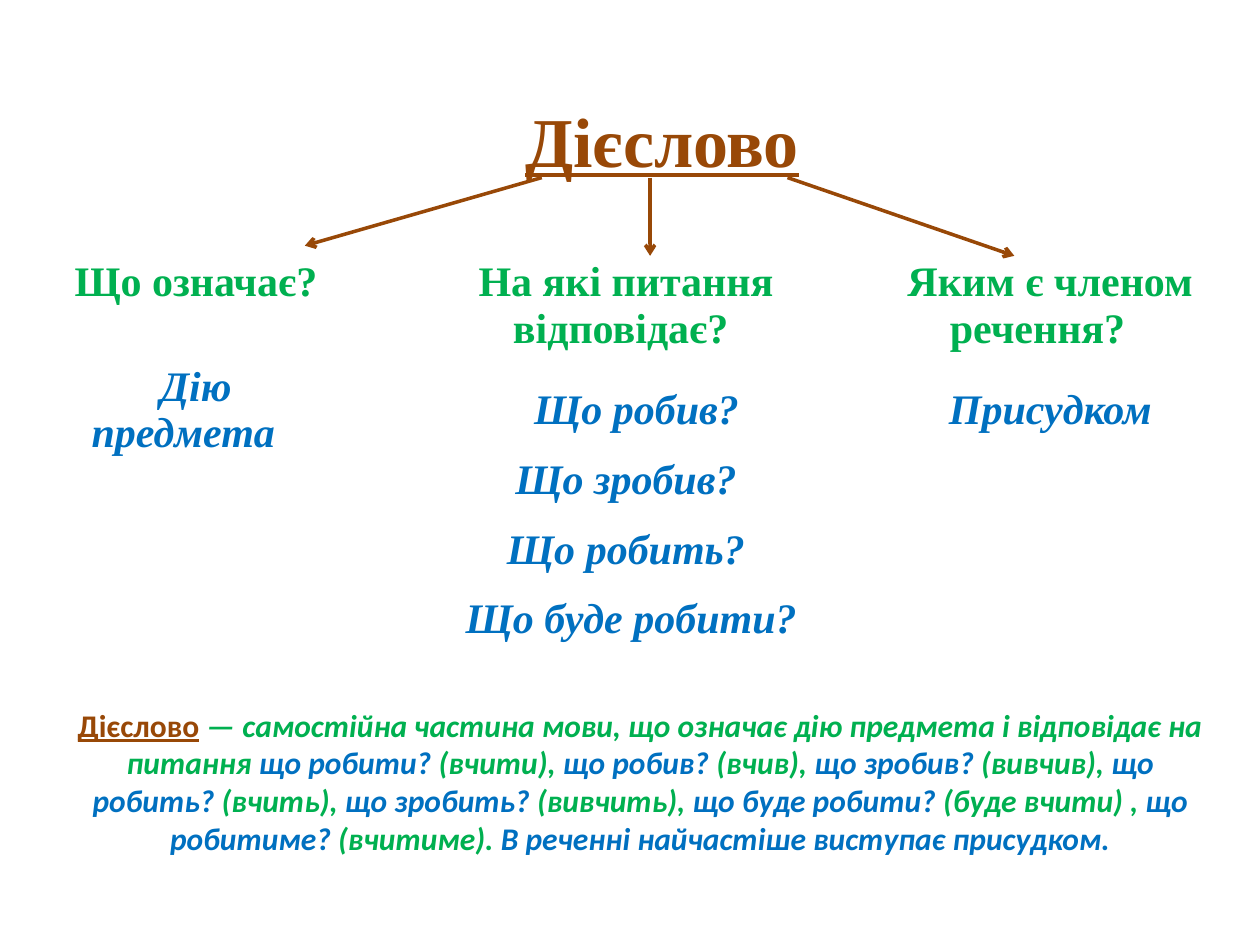
"""Build a slide about the verb: a three-column scheme with a definition below."""
from dataclasses import dataclass

from pptx import Presentation
from pptx.dml.color import RGBColor
from pptx.enum.shapes import MSO_CONNECTOR as Connector
from pptx.enum.text import MSO_ANCHOR as Anchor, MSO_AUTO_SIZE as AutoSize, PP_ALIGN as Align
from pptx.oxml.ns import qn
from pptx.oxml.xmlchemy import OxmlElement
from pptx.util import Pt

BROWN, GREEN, BLUE, BLACK = "984807", "00B050", "0070C0", "000000"
SERIF, SANS = "Times New Roman", "Calibri"
FIRST_LINE = 14.4
TITLE_BOTTOM_MARGIN = 40
DEFINITION_MARGIN = 14
COLUMN_WIDTHS = (164.9, 278.6, 254.2)
ROW_HEIGHTS = (114.5, 59.8, 168)


@dataclass(frozen=True)
class Style:
    color: str
    size: float = 24
    font: str = SERIF
    italic: bool = False
    underline: bool = False


@dataclass(frozen=True)
class Line:
    text: str
    margin: float = 0
    spacing: float = 1.0


@dataclass(frozen=True)
class CellText:
    row: int
    column: int
    style: Style
    lines: tuple[Line, ...]


@dataclass(frozen=True)
class Arrow:
    start: tuple[float, float]
    end: tuple[float, float]


TITLE = Style(BROWN, size=40, underline=True)
QUESTION = Style(GREEN)
ANSWER = Style(BLUE, italic=True)
TERM = Style(BROWN, 18, SANS, underline=True)
GAP = Style(BLACK, 18, SANS)
RULE = Style(GREEN, 18, SANS, italic=True)
KEY = Style(BLUE, 18, SANS, italic=True)

CELLS = (
    CellText(0, 0, TITLE, (Line("Дієслово", spacing=1.5),)),
    CellText(1, 0, QUESTION, (Line("Що означає?"),)),
    CellText(1, 1, QUESTION, (Line("На які питання", 48), Line("відповідає?", 42))),
    CellText(1, 2, QUESTION, (Line("Яким є членом речення?"),)),
    CellText(2, 0, ANSWER, (Line("Дію предмета"),)),
    CellText(2, 1, ANSWER, (
        Line("Що робив?", 60, 1.5),
        Line("Що зробив?", 48, 1.5),
        Line("Що робить?", 48, 1.5),
        Line("Що буде робити?", 54, 1.5),
    )),
    CellText(2, 2, ANSWER, (Line("Присудком", spacing=1.5),)),
)

ARROWS = (
    Arrow((309.6, 101.5), (174.2, 140.4)),
    Arrow((371.5, 101.5), (371.5, 146.2)),
    Arrow((450, 101.5), (579.6, 146.2)),
)

EXAMPLES = (
    ("що робити? ", "(вчити), "),
    ("що робив? ", "(вчив), "),
    ("що зробив? ", "(вивчив), "),
    ("що робить? ", "(вчить), "),
    ("що зробить? ", "(вивчить), "),
    ("що буде робити? ", "(буде вчити) , "),
    ("що робитиме? ", "(вчитиме). "),
)


def rgb(value: str) -> RGBColor:
    return RGBColor.from_string(value)


def add_run(paragraph, text: str, style: Style) -> None:
    run = paragraph.add_run()
    run.text = text
    font = run.font
    font.name, font.size, font.bold = style.font, Pt(style.size), True
    font.italic, font.underline = style.italic, style.underline
    font.color.rgb = rgb(style.color)


def fill_cell(cell, content: CellText) -> None:
    frame = cell.text_frame
    for index, line in enumerate(content.lines):
        paragraph = frame.add_paragraph() if index else frame.paragraphs[0]
        properties = paragraph._p.get_or_add_pPr()
        properties.set("marL", str(Pt(line.margin)))
        properties.set("indent", str(Pt(FIRST_LINE)))
        paragraph.alignment = Align.CENTER
        paragraph.line_spacing = line.spacing
        add_run(paragraph, line.text, content.style)


def add_scheme(slide) -> None:
    shape = slide.shapes.add_table(
        len(ROW_HEIGHTS), len(COLUMN_WIDTHS), Pt(22.3), Pt(33.8),
        Pt(sum(COLUMN_WIDTHS)), Pt(sum(ROW_HEIGHTS)))
    table = shape.table
    table.first_row = table.horz_banding = False
    for column, width in zip(table.columns, COLUMN_WIDTHS):
        column.width = Pt(width)
    for row, height in zip(table.rows, ROW_HEIGHTS):
        row.height = Pt(height)
    for cell in table.iter_cells():
        cell.fill.background()
        cell.margin_left = cell.margin_right = Pt(5.4)
        cell.margin_top = cell.margin_bottom = Pt(0)
    title_cell = table.cell(0, 0)
    title_cell.merge(table.cell(0, 2))
    title_cell.vertical_anchor = Anchor.MIDDLE
    title_cell.margin_bottom = Pt(TITLE_BOTTOM_MARGIN)
    for content in CELLS:
        fill_cell(table.cell(content.row, content.column), content)


def add_arrow(slide, arrow: Arrow) -> None:
    connector = slide.shapes.add_connector(
        Connector.STRAIGHT, *(Pt(value) for value in arrow.start + arrow.end))
    connector.line.color.rgb = rgb(BROWN)
    connector.line.width = Pt(2)
    head = OxmlElement("a:tailEnd")
    head.set("type", "arrow")
    properties = connector._element.spPr
    properties.find(qn("a:ln")).append(head)
    properties.append(OxmlElement("a:effectLst"))


def add_definition(slide) -> None:
    frame = slide.shapes.add_textbox(Pt(28.1), Pt(399.6), Pt(675.4), Pt(94.3)).text_frame
    frame.word_wrap = True
    frame.auto_size = AutoSize.SHAPE_TO_FIT_TEXT
    frame.margin_left = frame.margin_right = Pt(DEFINITION_MARGIN)
    paragraph = frame.paragraphs[0]
    paragraph.alignment = Align.CENTER
    add_run(paragraph, "Дієслово", TERM)
    add_run(paragraph, " ", GAP)
    add_run(paragraph, "— самостійна частина мови, що означає дію предмета "
                       "і відповідає на питання ", RULE)
    for question, example in EXAMPLES:
        add_run(paragraph, question, KEY)
        add_run(paragraph, example, RULE)
    add_run(paragraph, "В реченні найчастіше виступає присудком.", KEY)


def main() -> None:
    presentation = Presentation()
    presentation.slide_width, presentation.slide_height = Pt(720), Pt(540)
    slide = presentation.slides.add_slide(presentation.slide_layouts[6])
    add_scheme(slide)
    for arrow in ARROWS:
        add_arrow(slide, arrow)
    add_definition(slide)
    presentation.save("out.pptx")


if __name__ == "__main__":
    main()
